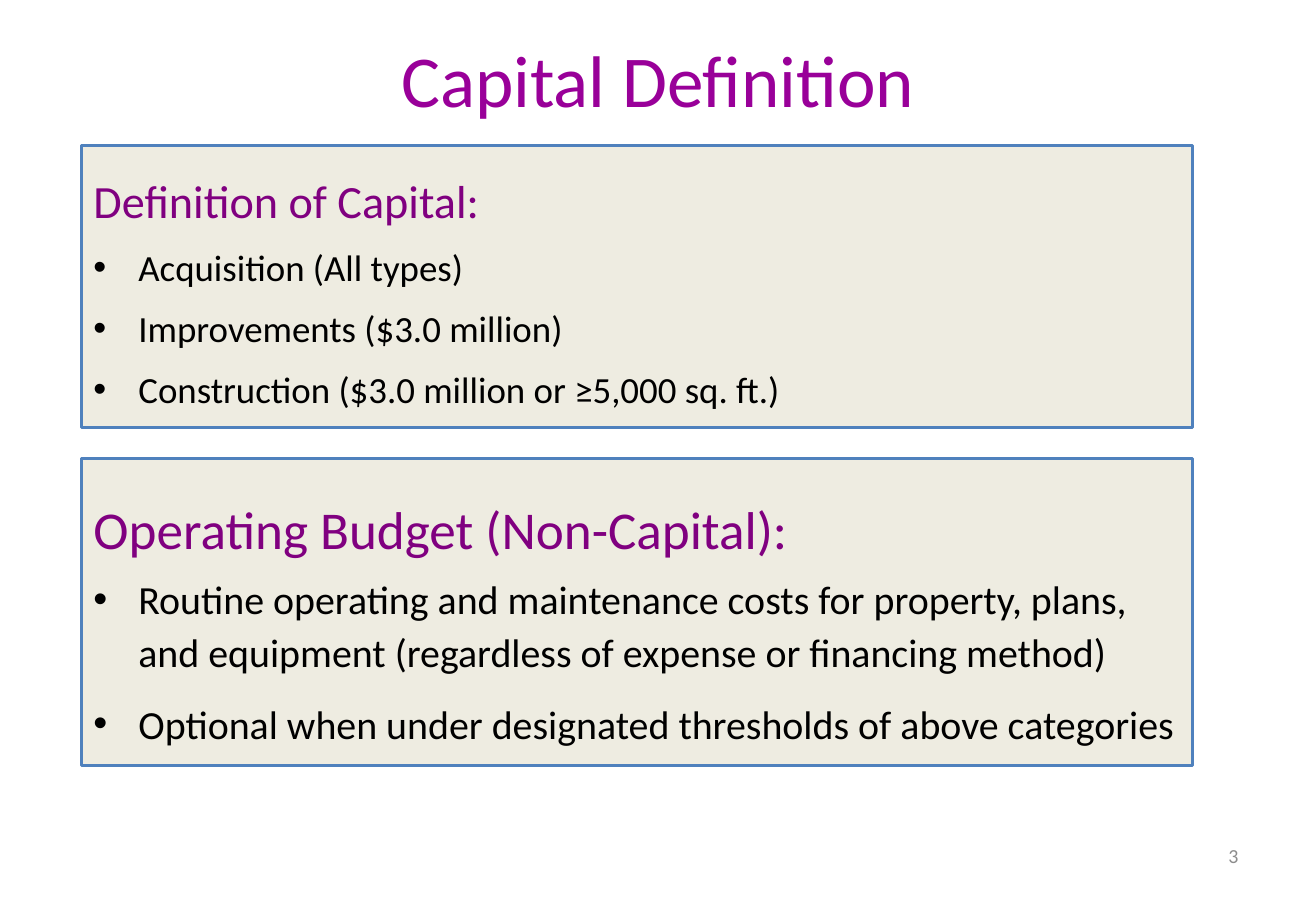
"""Build the Capital Definition slide."""
from dataclasses import dataclass

from lxml.etree import SubElement
from pptx import Presentation
from pptx.dml.color import RGBColor
from pptx.enum.shapes import MSO_SHAPE as Shape
from pptx.enum.text import MSO_ANCHOR as Anchor, PP_ALIGN as Align
from pptx.oxml.ns import qn
from pptx.util import Pt

PX = 7620
SLIDE = (1320, 900)
TITLE = ("Capital Definition", (-30, 10, 1380, 137))
NUMBER = ("3", (946, 834, 308, 48))
PANEL_LEFT, PANEL_WIDTH = 82, 1114
INDENT = 45
PANELS = [
    dict(top=146, height=283, heading="Definition of Capital:",
         heading_size=27.8, size=22.2, spacing=1.38, after=0,
         bullets=[("Acquisition (All types)", 1.38),
                  ("Improvements ($3.0 million)", 1.38),
                  ("Construction ($3.0 million or ≥5,000 sq. ft.)", 1.38)]),
    dict(top=460, height=308, heading="Operating Budget (Non-Capital):",
         heading_size=32, size=24, spacing=1.5, after=6,
         bullets=[("Routine operating and maintenance costs for property, plans, "
                   "and equipment (regardless of expense or financing method)", 1.1),
                  ("Optional when under designated thresholds of above categories", 1.5)]),
]


@dataclass(frozen=True)
class Theme:
    font: str = "Calibri"
    title: str = "990099"
    heading: str = "800080"
    body: str = "000000"
    number: str = "8C8C8C"
    fill: str = "EEECE1"
    line: str = "4F81BD"
    title_size: int = 44
    number_size: int = 12
    line_width: int = 2


T = Theme()


def emu(box):
    return [v * PX for v in box]


def write(p, text, size, color, align=Align.LEFT, spacing=1.0, after=0, bullet=False):
    p.alignment, p.line_spacing = align, spacing
    p.space_before, p.space_after = Pt(0), Pt(after)
    r = p.add_run()
    r.text = text
    r.font.name, r.font.size = T.font, Pt(size)
    r.font.color.rgb = RGBColor.from_string(color)
    if bullet:
        pPr = p._p.get_or_add_pPr()
        pPr.set("marL", str(INDENT * PX))
        pPr.set("indent", str(-INDENT * PX))
        SubElement(pPr, qn("a:buFont"), typeface="Arial")
        SubElement(pPr, qn("a:buChar"), char="•")


def add_panel(s, panel):
    box = (PANEL_LEFT, panel["top"], PANEL_WIDTH, panel["height"])
    sp = s.shapes.add_shape(Shape.RECTANGLE, *emu(box))
    sp.shadow.inherit = False
    sp.fill.solid()
    sp.fill.fore_color.rgb = RGBColor.from_string(T.fill)
    sp.line.color.rgb = RGBColor.from_string(T.line)
    sp.line.width = Pt(T.line_width)
    tf = sp.text_frame
    tf.word_wrap, tf.vertical_anchor = True, Anchor.TOP
    write(tf.paragraphs[0], panel["heading"], panel["heading_size"], T.heading,
          spacing=panel["spacing"], after=panel["after"])
    for text, spacing in panel["bullets"]:
        write(tf.add_paragraph(), text, panel["size"], T.body,
              spacing=spacing, bullet=True)


def main():
    prs = Presentation()
    prs.slide_width, prs.slide_height = emu(SLIDE)
    s = prs.slides.add_slide(prs.slide_layouts[5])

    text, box = TITLE
    title = s.shapes.title
    title.left, title.top, title.width, title.height = emu(box)
    title.text_frame.vertical_anchor = Anchor.MIDDLE
    write(title.text_frame.paragraphs[0], text, T.title_size, T.title, Align.CENTER)

    for panel in PANELS:
        add_panel(s, panel)

    text, box = NUMBER
    tf = s.shapes.add_textbox(*emu(box)).text_frame
    tf.word_wrap, tf.vertical_anchor = True, Anchor.MIDDLE
    write(tf.paragraphs[0], text, T.number_size, T.number, Align.RIGHT)

    prs.save("out.pptx")


if __name__ == "__main__":
    main()
